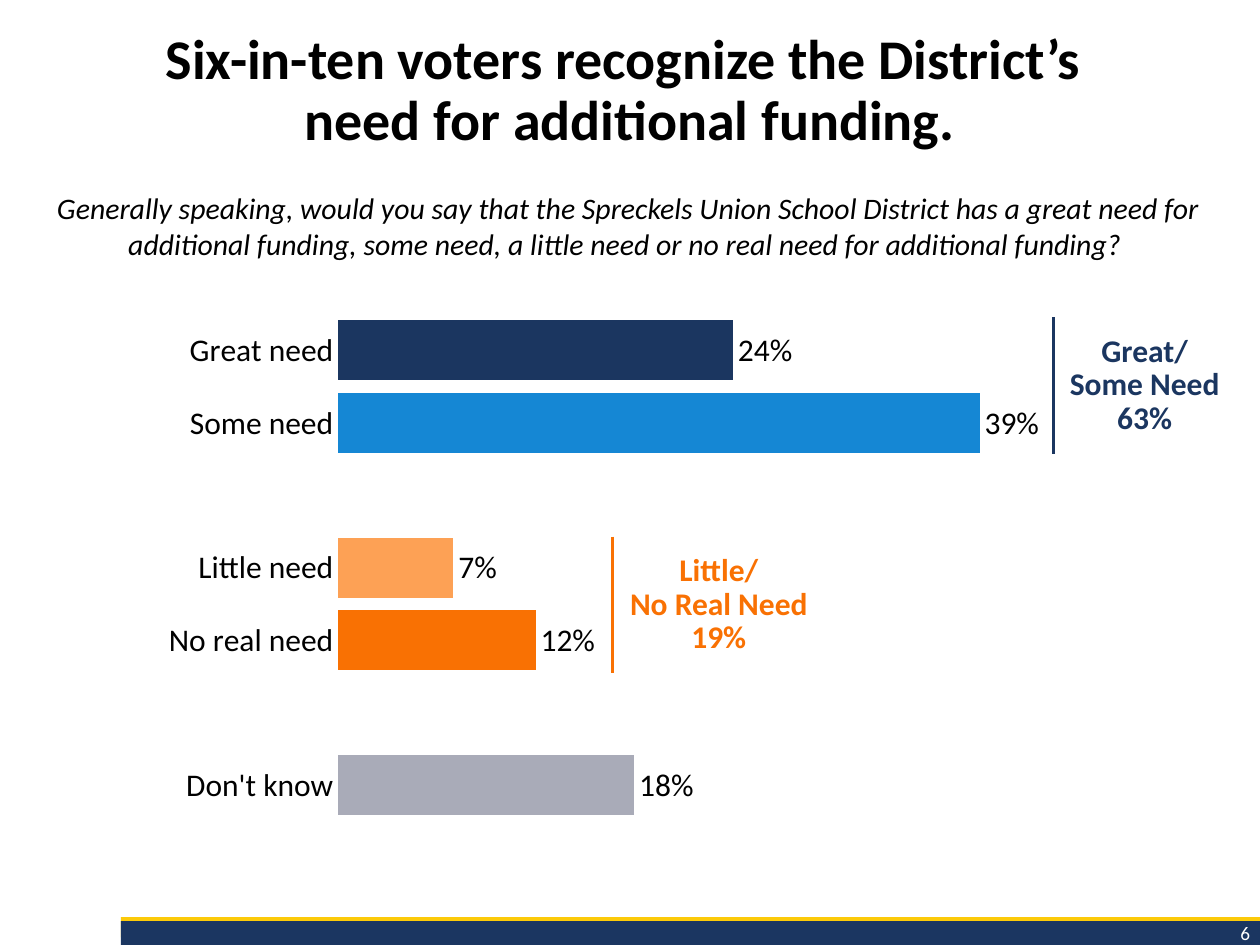
from lxml import etree
from pptx import Presentation
from pptx.chart.data import CategoryChartData
from pptx.dml.color import RGBColor
from pptx.enum.chart import XL_CHART_TYPE, XL_LABEL_POSITION, XL_TICK_MARK
from pptx.enum.shapes import MSO_CONNECTOR, MSO_SHAPE
from pptx.enum.text import MSO_ANCHOR, PP_ALIGN
from pptx.oxml import parse_xml
from pptx.oxml.ns import nsdecls, qn
from pptx.util import Inches, Pt

BAR = XL_CHART_TYPE.BAR_CLUSTERED
OUTSIDE = XL_LABEL_POSITION.OUTSIDE_END
NO_TICK = XL_TICK_MARK.NONE
STRAIGHT = MSO_CONNECTOR.STRAIGHT
RECTANGLE = MSO_SHAPE.RECTANGLE
TOP, MIDDLE = MSO_ANCHOR.TOP, MSO_ANCHOR.MIDDLE
CENTER, RIGHT = PP_ALIGN.CENTER, PP_ALIGN.RIGHT

FONT = "Calibri"
BLACK, WHITE, NAVY, ORANGE = "000000", "FFFFFF", "1B3660", "F97103"
FOOTER_NAVY, GOLD = "1B3661", "FCCA09"

# Category, share of voters, bar colour; an empty row separates the groups
GAP_ROW = ("", None, None)
RESPONSES = [
    ("Great need", 0.24, NAVY),
    ("Some need", 0.39, "1587D4"),
    GAP_ROW,
    ("Little need", 0.07, "FDA155"),
    ("No real need", 0.12, ORANGE),
    GAP_ROW,
    ("Don't know", 0.18, "A9ABB8"),
]


def rgb(value):
    return RGBColor.from_string(value)


def style_font(font, size, color=BLACK, bold=False, italic=False):
    font.name, font.size = FONT, Pt(size)
    font.bold, font.italic = bold, italic
    font.color.rgb = rgb(color)


def add_text(shapes, box, text, size, color=BLACK, bold=False, italic=False,
             align=CENTER, anchor=TOP, spacing=None):
    frame = shapes.add_textbox(*map(Inches, box)).text_frame
    frame.word_wrap = True
    frame.vertical_anchor = anchor
    paragraph = frame.paragraphs[0]
    paragraph.text = text
    paragraph.alignment = align
    paragraph.line_spacing = spacing
    style_font(paragraph.font, size, color, bold, italic)


def add_footer(slide, box, number):
    left, top, width, height = box
    # Gold strip showing above the navy band
    bands = [(top, 0.16, GOLD), (top + 0.03, height - 0.03, FOOTER_NAVY)]
    for band_top, band_height, color in bands:
        band = slide.shapes.add_shape(
            RECTANGLE, *map(Inches, (left, band_top, width, band_height)))
        band.shadow.inherit = False
        band.fill.solid()
        band.fill.fore_color.rgb = rgb(color)
        band.line.fill.background()
    number_box = (left + width - 1.46, top - 0.02, 1.48, 0.29)
    add_text(slide.shapes, number_box, number, 11, WHITE, align=RIGHT, anchor=MIDDLE)


def set_plot_layout(chart, x, y, width, height):
    plot_area = chart._chartSpace.chart.plotArea
    for old in plot_area.findall(qn("c:layout")):
        plot_area.remove(old)
    layout = parse_xml(f"<c:layout {nsdecls('c')}><c:manualLayout/></c:layout>")
    settings = [("layoutTarget", "inner"), ("xMode", "edge"), ("yMode", "edge"),
                ("x", x), ("y", y), ("w", width), ("h", height)]
    for tag, value in settings:
        etree.SubElement(layout[0], qn(f"c:{tag}")).set("val", str(value))
    plot_area.insert(0, layout)


def add_need_chart(slide, box):
    data = CategoryChartData(number_format="0%")
    data.categories = [name for name, _, _ in RESPONSES]
    data.add_series("Series 1", [share for _, share, _ in RESPONSES])
    chart = slide.shapes.add_chart(BAR, *map(Inches, box), data).chart
    chart.has_legend = chart.has_title = False
    style_font(chart.font, 10)
    set_plot_layout(chart, 0.27, 0.038, 0.7, 0.879)

    # Axes
    categories = chart.category_axis
    categories.reverse_order = True
    categories.major_tick_mark = categories.minor_tick_mark = NO_TICK
    categories.format.line.fill.background()
    style_font(categories.tick_labels.font, 18)
    shares = chart.value_axis
    shares.minimum_scale, shares.maximum_scale, shares.major_unit = 0, 0.45, 0.15
    shares.has_major_gridlines = False
    shares.visible = False

    # Bars
    plot = chart.plots[0]
    plot.gap_width = 21
    plot.vary_by_categories = False
    series = plot.series[0]
    series.format.fill.solid()
    series.format.fill.fore_color.rgb = rgb(NAVY)
    for index, (_, _, color) in enumerate(RESPONSES):
        if color:
            fill = series.points[index].format.fill
            fill.solid()
            fill.fore_color.rgb = rgb(color)

    # Value labels
    labels = series.data_labels
    labels.show_value = True
    labels.number_format, labels.number_format_is_linked = "0%", False
    labels.position = OUTSIDE
    style_font(labels.font, 18)


def add_subtotal(slide, box, line_x, text, color):
    left, top, width, height = box
    shapes = slide.shapes.add_group_shape().shapes
    add_text(shapes, box, text, 18, color, bold=True, anchor=MIDDLE, spacing=Pt(19))
    # Rule spanning the two bars, slightly taller than the text
    rule = shapes.add_connector(STRAIGHT, *map(
        Inches, (line_x, top - 0.09, line_x, top + height + 0.09)))
    rule.line.color.rgb = rgb(color)
    rule.line.width = Pt(1.5)
    etree.SubElement(rule._element.spPr, qn("a:effectLst"))


def main():
    prs = Presentation()
    prs.slide_width, prs.slide_height = Inches(10), Inches(7.5)
    slide = prs.slides.add_slide(prs.slide_layouts[6])

    add_footer(slide, (0.96, 7.28, 9.04, 0.22), "6")
    add_text(slide.shapes, (0, 0.2, 10, 1.22),
             "Six-in-ten voters recognize the District’s \vneed for additional funding.",
             32, bold=True, spacing=0.9)
    add_text(slide.shapes, (0, 1.46, 9.98, 0.67),
             "Generally speaking, would you say that the Spreckels Union School District "
             "has a great need for additional funding, some need, a little need or no "
             "real need for additional funding? ", 17, italic=True)
    add_need_chart(slide, (0.42, 2.32, 8.39, 4.58))
    add_subtotal(slide, (4.88, 4.35, 1.65, 0.9), 4.86,
                 "Little/\vNo Real Need\v19%", ORANGE)
    add_subtotal(slide, (8.26, 2.61, 1.65, 0.9), 8.36,
                 "Great/\vSome Need\v63%", NAVY)
    prs.save("out.pptx")


if __name__ == "__main__":
    main()
